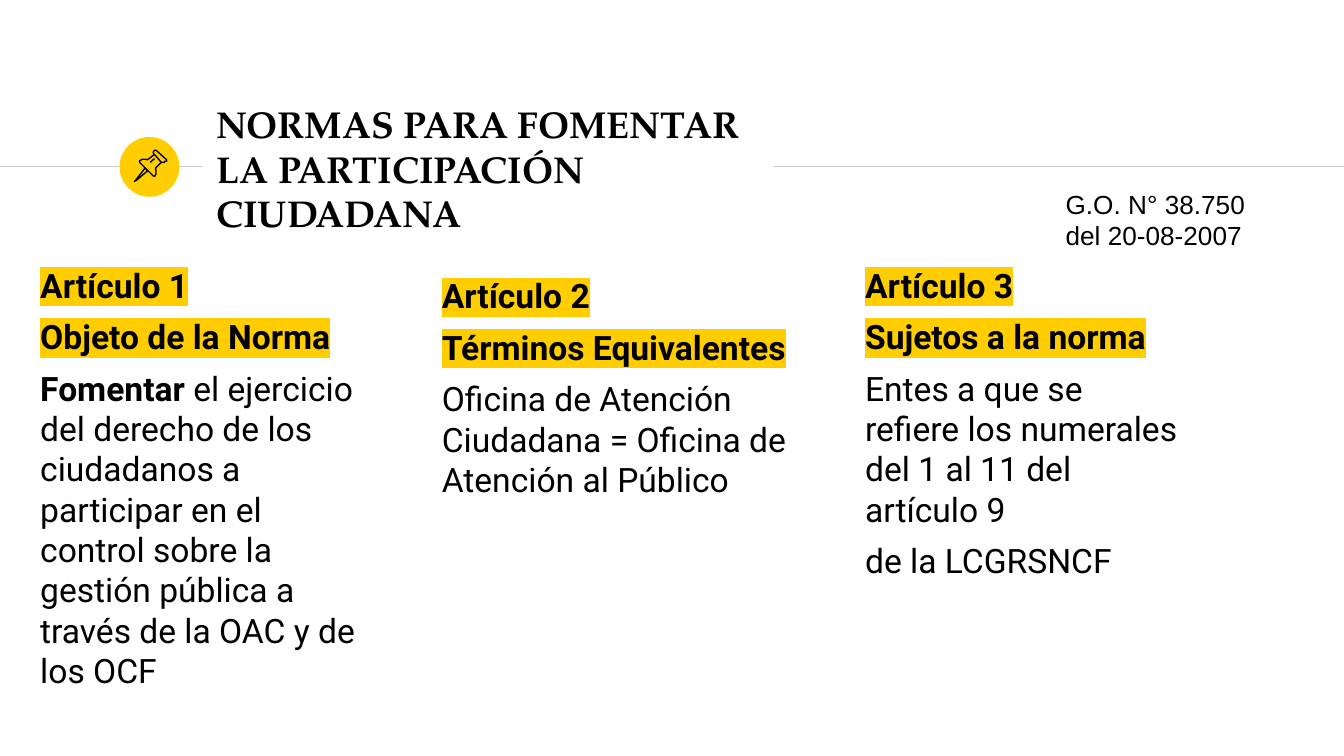
import pptx
import pptx.util
import pptx.dml.color
import pptx.enum.shapes
import pptx.enum.text
import lxml.etree
from pptx.oxml.ns import qn

Cm = pptx.util.Cm
Pt = pptx.util.Pt
BLACK = pptx.dml.color.RGBColor(0x00, 0x00, 0x00)
YELLOW = pptx.dml.color.RGBColor(0xFF, 0xCD, 0x00)
GRAY = pptx.dml.color.RGBColor(0xCC, 0xCC, 0xCC)


def add_span(para, text, font, size, bold=False, highlight=None):
    span = para.add_run()
    span.text = text
    span.font.name = font
    span.font.size = Pt(size)
    span.font.bold = bold
    span.font.color.rgb = BLACK
    if highlight is not None:
        mark = lxml.etree.Element(qn("a:highlight"))
        lxml.etree.SubElement(mark, qn("a:srgbClr")).set("val", str(highlight))
        span.font._element.find(qn("a:solidFill")).addnext(mark)


def place(box, left, top, width, height, anchor):
    box.left, box.top, box.width, box.height = Cm(left), Cm(top), Cm(width), Cm(height)
    frame = box.text_frame
    frame.word_wrap = True
    frame.auto_size = pptx.enum.text.MSO_AUTO_SIZE.NONE
    frame.vertical_anchor = anchor
    frame.margin_left = frame.margin_right = Cm(0.25)
    frame.margin_top = frame.margin_bottom = Cm(0.25)
    return frame


deck = pptx.Presentation()
deck.slide_width, deck.slide_height = Cm(25.4), Cm(14.29)
page = deck.slides.add_slide(deck.slide_layouts.get_by_name("Comparison"))
shapes = page.shapes
TOP = pptx.enum.text.MSO_ANCHOR.TOP
MIDDLE = pptx.enum.text.MSO_ANCHOR.MIDDLE
LEFT = pptx.enum.text.PP_ALIGN.LEFT

for start, end in [(0, 3.81), (14.63, 25.4)]:
    rule = shapes.add_connector(
        pptx.enum.shapes.MSO_CONNECTOR.STRAIGHT, Cm(start), Cm(3.15), Cm(end), Cm(3.15))
    rule.line.color.rgb = GRAY
    rule.line.width = Pt(0.75)
    lxml.etree.SubElement(rule._element.spPr, qn("a:effectLst"))

badge = shapes.add_shape(
    pptx.enum.shapes.MSO_SHAPE.OVAL, Cm(2.26), Cm(2.59), Cm(1.13), Cm(1.13))
badge.shadow.inherit = False
badge.fill.solid()
badge.fill.fore_color.rgb = YELLOW
badge.line.fill.background()

pin_outlines = [
    ([(274, 318), (257, 340), (254, 343), (259, 340), (279, 323)], True),
    ([(292, 292), (305, 307), (310, 307), (312, 305), (315, 305), (315, 302),
      (295, 284), (292, 284), (290, 287), (290, 290)], True),
    ([(292, 292), (279, 302), (274, 301), (269, 301), (264, 304), (264, 307),
      (290, 333), (293, 333), (295, 328), (295, 323), (294, 318), (305, 307)], False),
    ([(284, 307), (292, 300)], False),
]
for points, closed in pin_outlines:
    builder = shapes.build_freeform(*points[0], scale=Cm(0.01))
    builder.add_line_segments(points[1:], close=closed)
    outline = builder.convert_to_shape()
    outline.shadow.inherit = False
    outline.fill.background()
    outline.line.color.rgb = BLACK
    outline.line.width = Pt(0.75)

frame = place(shapes.title, 3.84, 2.57, 11.86, 1.22, MIDDLE)
para = frame.paragraphs[0]
para.alignment = LEFT
add_span(para, "NORMAS PARA FOMENTAR ", "TeX Gyre Pagella", 20, True)
para.add_line_break()
add_span(para, "LA PARTICIPACIÓN CIUDADANA", "TeX Gyre Pagella", 20, True)

articles = [
    (0.51, 4.75, 6.6, ["Artículo 1", "Objeto de la Norma"],
     [[("Fomentar ", True),
       ("el ejercicio del derecho de los ciudadanos a participar en el control sobre "
        "la gestión pública a través de la OAC y de los OCF", False)]]),
    (8.1, 4.95, 7.01, ["Artículo 2", "Términos Equivalentes"],
     [[("Oficina de Atención Ciudadana = Oficina de Atención al Público", False)]]),
    (16.1, 4.75, 6.48, ["Artículo 3", "Sujetos a la norma"],
     [[("Entes a que se refiere los numerales del 1 al 11 del artículo 9", False)],
      [("de la LCGRSNCF", False)]]),
]
bodies = list(page.placeholders)[1:]
for body, (left, top, width, headings, texts) in zip(bodies, articles):
    frame = place(body, left, top, width, 8.66, TOP)
    lines = [[(heading, True, YELLOW)] for heading in headings] + texts
    for index, line in enumerate(lines):
        para = frame.paragraphs[0] if index == 0 else frame.add_paragraph()
        para.alignment = LEFT
        para.space_before = Pt(6)
        properties = para._p.get_or_add_pPr()
        properties.set("marL", "0")
        properties.set("indent", "0")
        lxml.etree.SubElement(properties, qn("a:buNone"))
        for text, *style in line:
            add_span(para, text, "Roboto", 18, *style)

for spare in bodies[len(articles):]:
    spare._element.getparent().remove(spare._element)

gazette = shapes.add_textbox(Cm(19.89), Cm(3.43), Cm(4.6), Cm(1.45))
gazette.text_frame.word_wrap = True
add_span(gazette.text_frame.paragraphs[0], "G.O. N° 38.750 del 20-08-2007", "Arial", 14)

deck.save("out.pptx")
